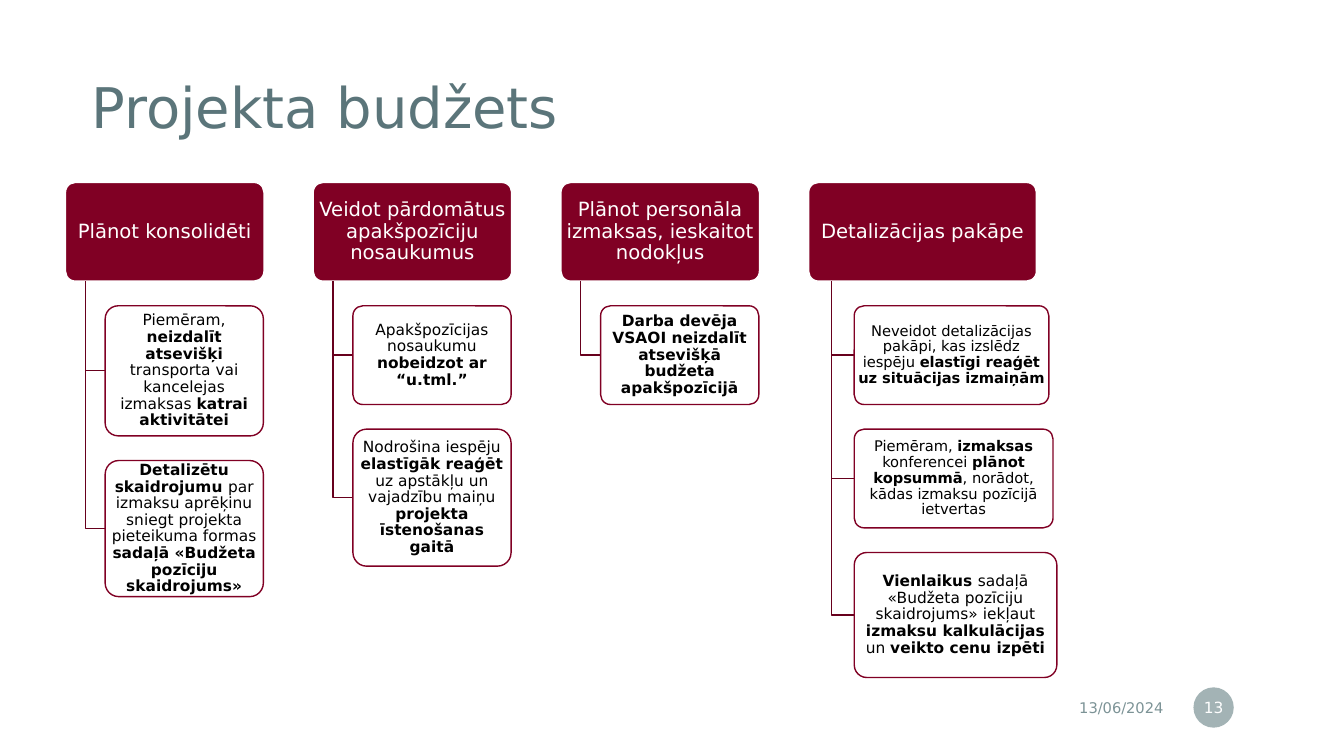
from pptx import Presentation
from pptx.dml.color import RGBColor as RGB
from pptx.enum.shapes import MSO_SHAPE as Preset
from pptx.enum.text import MSO_ANCHOR as Anchor, PP_ALIGN as Align
from pptx.oxml.ns import qn
from pptx.util import Pt
from lxml.etree import SubElement

TITLE = "Projekta budžets"
DATE = "13/06/2024"
PAGE = "13"

# Bold passages stand between asterisks; each detail is (text, width, height, size).
BRANCHES = [
    ("Plānot konsolidēti", 141.8, [
        ("Piemēram, *neizdalīt atsevišķi *transporta vai kancelejas izmaksas *katrai aktivitātei*",
         113, 92.9, 11),
        ("*Detalizētu skaidrojumu *par izmaksu aprēķinu sniegt projekta pieteikuma formas "
         "*sadaļā «Budžeta pozīciju skaidrojums»*", 113, 97.2, 11),
    ]),
    ("Veidot pārdomātus apakšpozīciju nosaukumus", 141.8, [
        ("Apakšpozīcijas nosaukumu *nobeidzot ar “u.tml.”*", 113, 70.5, 11),
        ("Nodrošina iespēju *elastīgāk reaģēt *uz apstākļu un vajadzību maiņu "
         "*projekta īstenošanas gaitā*", 113, 97.9, 11),
    ]),
    ("Plānot personāla izmaksas, ieskaitot nodokļus", 141.8, [
        ("*Darba devēja VSAOI neizdalīt atsevišķā budžeta apakšpozīcijā*", 113, 70.5, 11),
    ]),
    ("Detalizācijas pakāpe", 162.7, [
        ("Neveidot detalizācijas pakāpi, kas izslēdz iespēju "
         "*elastīgi reaģēt uz situācijas izmaiņām*", 139, 70.5, 10.5),
        ("Piemēram, *izmaksas* konferencei *plānot kopsummā*, norādot, "
         "kādas izmaksu pozīcijā ietvertas", 142, 70.5, 10.5),
        ("*Vienlaikus *sadaļā «Budžeta pozīciju skaidrojums» iekļaut "
         "*izmaksu kalkulācijas *un *veikto cenu izpēti*", 144.7, 89.3, 11),
    ]),
]

THEME = {
    "font": "DejaVu Sans",
    "title": RGB(0x5B, 0x75, 0x7A), "muted": RGB(0x7C, 0x93, 0x96),
    "header": RGB(0x80, 0x00, 0x24), "elbow": RGB(0x67, 0x00, 0x1D),
    "white": RGB(0xFF, 0xFF, 0xFF), "black": RGB(0, 0, 0),
    "title_size": 40, "header_size": 14, "date_size": 10.5, "page_size": 11,
}

LEFT, TOP, STEP = 46.8, 130.3, 176.95
HEADER_HEIGHT = 70.5
GAP = HEADER_HEIGHT / 4
TRUNK, INDENT = 0.1, 0.2


def write(holder, text, size, color, align, insets, spacing=None):
    frame = holder.text_frame
    frame.word_wrap = True
    frame.vertical_anchor = Anchor.MIDDLE
    frame.margin_left = frame.margin_right = Pt(insets[0])
    frame.margin_top = frame.margin_bottom = Pt(insets[1])
    paragraph = frame.paragraphs[0]
    paragraph.alignment = align
    if spacing:
        paragraph.line_spacing = spacing
    for order, passage in enumerate(text.split("*")):
        if passage:
            run = paragraph.add_run()
            run.text = passage
            run.font.name = THEME["font"]
            run.font.size = Pt(size)
            run.font.bold = order % 2 == 1
            run.font.color.rgb = color


def add_label(slide, box, *style):
    write(slide.shapes.add_textbox(*map(Pt, box)), *style)


def add_block(slide, preset, box, fill, outline=None, opacity=100):
    block = slide.shapes.add_shape(preset, *map(Pt, box))
    block.shadow.inherit = False
    block.fill.solid()
    block.fill.fore_color.rgb = fill
    if opacity < 100:
        tint = block._element.spPr.find(".//" + qn("a:srgbClr"))
        SubElement(tint, qn("a:alpha")).set("val", str(opacity * 1000))
    if outline is None:
        block.line.fill.background()
    else:
        block.line.color.rgb = outline
        block.line.width = Pt(1)
    if preset == Preset.ROUNDED_RECTANGLE:
        block.adjustments[0] = 0.1
    return block


def add_elbow(slide, x, top, end_x, end_y):
    outline = slide.shapes.build_freeform(Pt(x), Pt(top))
    outline.add_line_segments([(Pt(x), Pt(end_y)), (Pt(end_x), Pt(end_y))], close=False)
    elbow = outline.convert_to_shape()
    elbow.shadow.inherit = False
    elbow.fill.background()
    elbow.line.color.rgb = THEME["elbow"]
    elbow.line.width = Pt(1)


def add_branch(slide, x, heading, width, details):
    header = add_block(slide, Preset.ROUNDED_RECTANGLE, (x, TOP, width, HEADER_HEIGHT),
                       THEME["header"], THEME["white"])
    write(header, heading, THEME["header_size"], THEME["white"], Align.CENTER, (2, 1.4), 0.9)
    bottom = TOP + HEADER_HEIGHT
    detail_x = x + INDENT * width
    y = bottom + GAP
    for text, detail_width, height, size in details:
        add_elbow(slide, x + TRUNK * width, bottom, detail_x, y + height / 2)
        detail = add_block(slide, Preset.ROUNDED_RECTANGLE, (detail_x, y, detail_width, height),
                           THEME["white"], THEME["header"], 90)
        write(detail, text, size, THEME["black"], Align.CENTER, (0, 0), 0.9)
        y += height + GAP


def main():
    deck = Presentation()
    deck.slide_width, deck.slide_height = Pt(960), Pt(540)
    slide = deck.slides.add_slide(deck.slide_layouts[6])
    add_label(slide, (65.5, 34.6, 628.6, 88.6), TITLE, THEME["title_size"],
              THEME["title"], Align.LEFT, (0, 14.4), 0.9)
    add_label(slide, (621.4, 492.5, 216.7, 25.2), DATE, THEME["date_size"],
              THEME["muted"], Align.RIGHT, (7.2, 3.6))
    badge = add_block(slide, Preset.OVAL, (852.5, 491, 28.8, 28.8), THEME["muted"], opacity=70)
    write(badge, PAGE, THEME["page_size"], THEME["white"], Align.CENTER, (1.4, 3.6))
    for column, branch in enumerate(BRANCHES):
        add_branch(slide, LEFT + column * STEP, *branch)
    deck.save("out.pptx")


if __name__ == "__main__":
    main()
